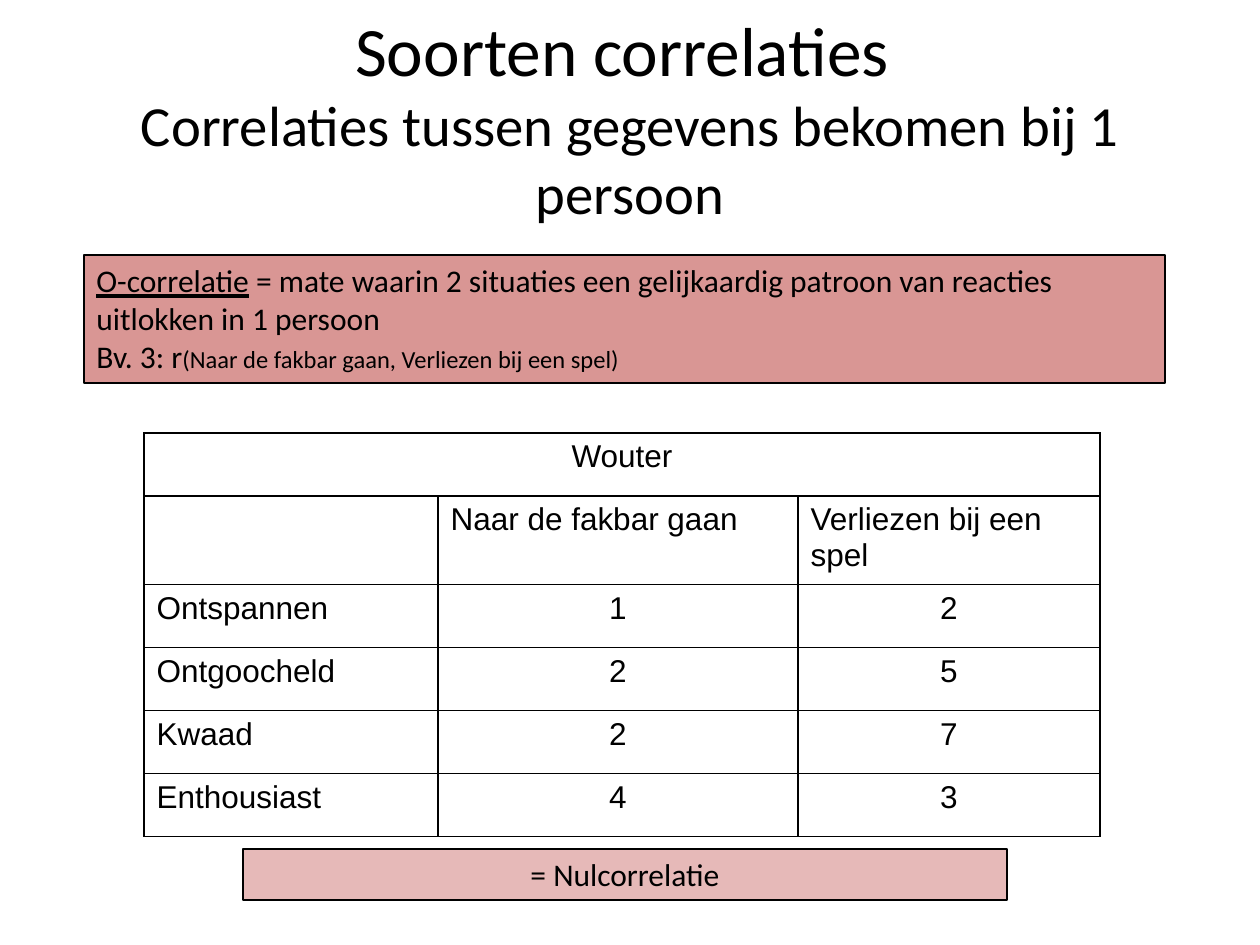
"""Build the slide on correlations within one person."""
import pptx
import pptx.util
import pptx.dml.color
import pptx.enum.shapes
import pptx.enum.text
import pptx.oxml

RGBColor = pptx.dml.color.RGBColor
Align = pptx.enum.text.PP_ALIGN
Anchor = pptx.enum.text.MSO_ANCHOR
BLACK = RGBColor(0x00, 0x00, 0x00)
ROSE = RGBColor(0xD9, 0x96, 0x94)
PALE_ROSE = RGBColor(0xE6, 0xB9, 0xB8)
PX = 914400 / 126

TITLE = [[("Soorten correlaties \v", {"size": 39.6}),
          ("Correlaties tussen gegevens bekomen bij 1 persoon", {"size": 32.4})]]
DEFINITION = [
    [("O-correlatie", {"underline": True}),
     (" = mate waarin 2 situaties een gelijkaardig patroon van reacties uitlokken in 1 persoon", {})],
    [("Bv. 3: r", {}), ("(Naar de fakbar gaan, Verliezen bij een spel)", {"size": 14})],
]
CONCLUSION = [[("= Nulcorrelatie", {})]]
BANDS = [
    ((84, 255, 1081, 128), ROSE, DEFINITION, Align.LEFT),
    ((243, 849, 764, 51), PALE_ROSE, CONCLUSION, Align.CENTER),
]
PERSON = "Wouter"
SITUATIONS = ["", "Naar de fakbar gaan", "Verliezen bij een spel"]
REACTIONS = [("Ontspannen", 1, 2), ("Ontgoocheld", 2, 5), ("Kwaad", 2, 7), ("Enthousiast", 4, 3)]
TABLE_LEFT, TABLE_TOP = 144, 433
COLUMN_WIDTHS = [294, 360, 302]
ROW_HEIGHT, HEADING_HEIGHT = 63, 88


def emu(length):
    return pptx.util.Emu(round(length * PX))


def write(frame, paragraphs, align, font="Calibri"):
    frame.word_wrap = True
    for index, spans in enumerate(paragraphs):
        para = frame.paragraphs[0] if index == 0 else frame.add_paragraph()
        para.alignment = align
        for text, changes in spans:
            if text.endswith("\v"):
                span = para.add_run()
                span.text = text[:-1]
                para.add_line_break()
            else:
                span = para.add_run()
                span.text = text
            span.font.color.rgb = BLACK
            values = {"name": font, "size": 18, **changes}
            values["size"] = pptx.util.Pt(values["size"])
            for name, value in values.items():
                setattr(span.font, name, value)


def add_borders(cell):
    properties = cell._tc.get_or_add_tcPr()
    for position, side in enumerate(("lnL", "lnR", "lnT", "lnB")):
        properties.insert(position, pptx.oxml.parse_xml(
            f'<a:{side} xmlns:a="http://schemas.openxmlformats.org/drawingml/2006/main" w="12700">'
            f'<a:solidFill><a:srgbClr val="{BLACK}"/></a:solidFill></a:{side}>'))


def add_title(page):
    box = page.shapes.add_textbox(*map(emu, (63, 38, 1134, 157)))
    box.text_frame.vertical_anchor = Anchor.MIDDLE
    write(box.text_frame, TITLE, Align.CENTER)


def add_band(page, place, fill, paragraphs, align):
    box = page.shapes.add_shape(pptx.enum.shapes.MSO_SHAPE.RECTANGLE, *map(emu, place))
    box.shadow.inherit = False
    box.fill.solid()
    box.fill.fore_color.rgb = fill
    box.line.color.rgb = BLACK
    box.line.width = pptx.util.Pt(0.75)
    box.text_frame.vertical_anchor = Anchor.TOP
    write(box.text_frame, paragraphs, align)


def add_scores(page):
    rows = [(PERSON, "", ""), SITUATIONS, *REACTIONS]
    heights = [ROW_HEIGHT, HEADING_HEIGHT] + [ROW_HEIGHT] * len(REACTIONS)
    place = (TABLE_LEFT, TABLE_TOP, sum(COLUMN_WIDTHS), sum(heights))
    table = page.shapes.add_table(len(rows), len(COLUMN_WIDTHS), *map(emu, place)).table
    table.first_row = table.horz_banding = False
    for column, width in zip(table.columns, COLUMN_WIDTHS):
        column.width = emu(width)
    for row, height in zip(table.rows, heights):
        row.height = emu(height)
    table.cell(0, 0).merge(table.cell(0, len(COLUMN_WIDTHS) - 1))
    for r, values in enumerate(rows):
        for c, value in enumerate(values):
            cell = table.cell(r, c)
            cell.fill.background()
            add_borders(cell)
            if value != "":
                centred = r == 0 or isinstance(value, int)
                align = Align.CENTER if centred else Align.LEFT
                write(cell.text_frame, [[(str(value), {})]], align, "Arial")


def main():
    deck = pptx.Presentation()
    deck.slide_width, deck.slide_height = emu(1260), emu(945)
    page = deck.slides.add_slide(deck.slide_layouts[6])
    add_title(page)
    for band in BANDS:
        add_band(page, *band)
    add_scores(page)
    deck.save("out.pptx")


if __name__ == "__main__":
    main()
